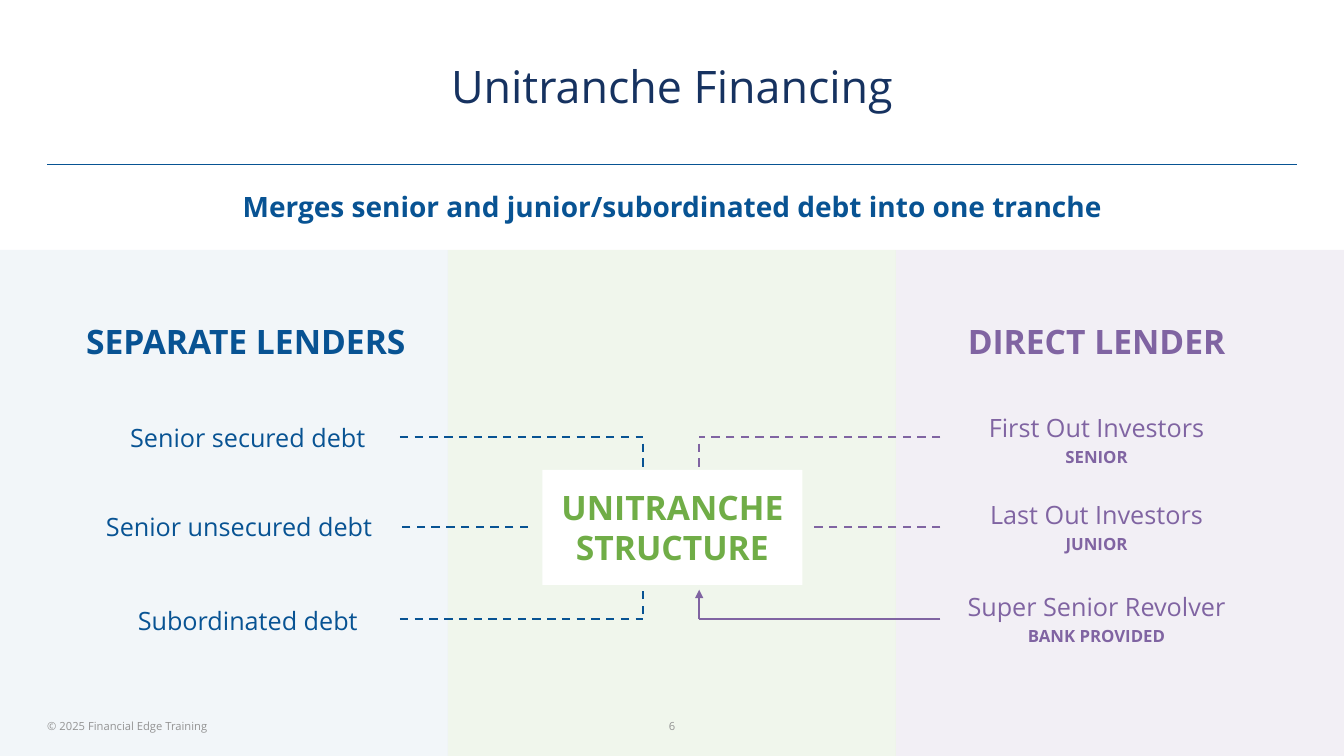
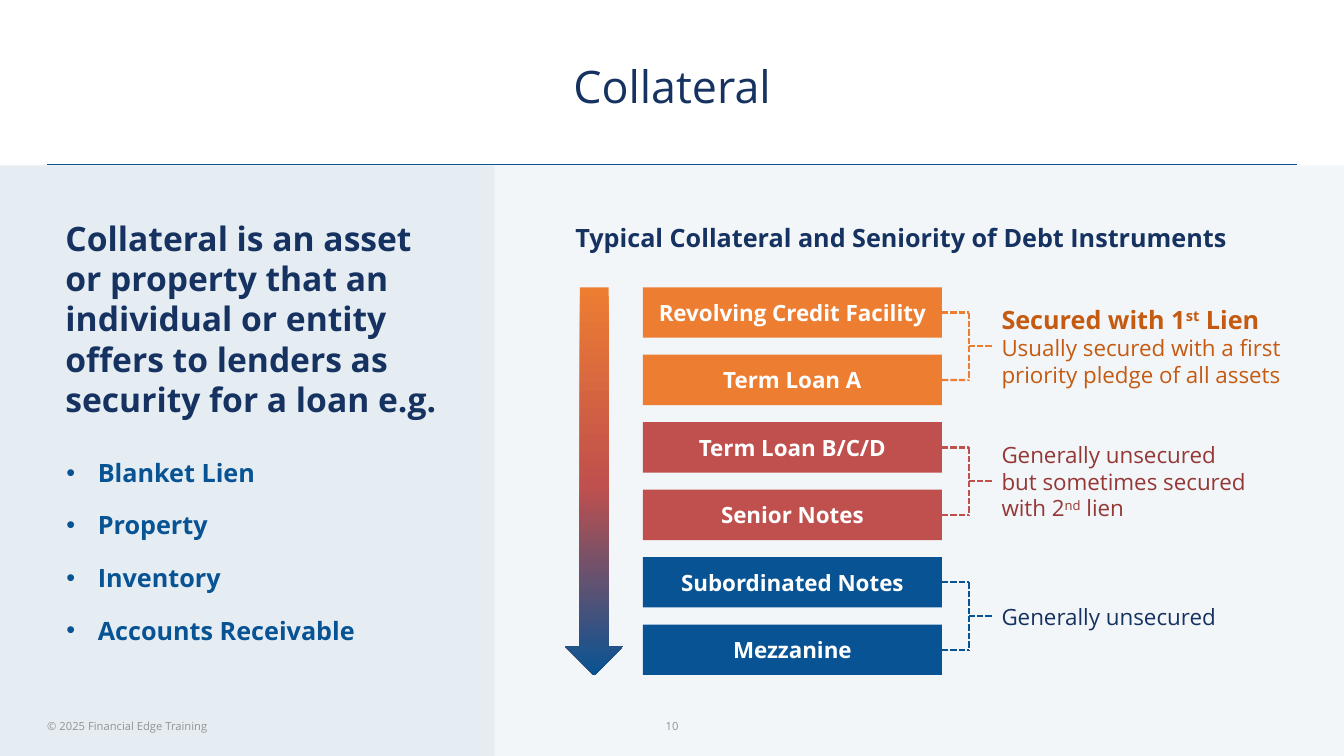
from copy import deepcopy

from lxml.etree import SubElement
from pptx import Presentation
from pptx.dml.color import RGBColor
from pptx.enum.dml import MSO_LINE
from pptx.enum.shapes import MSO_CONNECTOR, MSO_SHAPE
from pptx.enum.text import MSO_ANCHOR, MSO_AUTO_SIZE, PP_ALIGN
from pptx.oxml.ns import qn
from pptx.util import Cm, Pt

NAVY = RGBColor(0x16, 0x32, 0x60)
BLUE = RGBColor(0x08, 0x53, 0x93)
PURPLE = RGBColor(0x80, 0x64, 0xA2)
GREEN = RGBColor(0x70, 0xAD, 0x47)
ORANGE = RGBColor(0xED, 0x7D, 0x31)
RUST = RGBColor(0xC5, 0x5A, 0x11)
RED = RGBColor(0xC0, 0x50, 0x4D)
MAROON = RGBColor(0x95, 0x37, 0x35)
GREY = RGBColor(0x93, 0x93, 0x93)
WHITE = RGBColor(0xFF, 0xFF, 0xFF)

FONT = "Open Sans"
WIDTH, HEIGHT = 33.87, 19.05
LEFT, CENTER = PP_ALIGN.LEFT, PP_ALIGN.CENTER
TOP, MIDDLE = MSO_ANCHOR.TOP, MSO_ANCHOR.MIDDLE
DASH, DOTS = MSO_LINE.DASH, MSO_LINE.SQUARE_DOT
FOOTER = "© 2025 Financial Edge Training"

# Content of the financing slide: left, top, width, text
MERGE = "Merges senior and junior/subordinated debt into one tranche"
DEBTS = [
    (1.19, 9.83, 10.11, "Senior secured debt"),
    (1.96, 12.07, 8.13, "Senior unsecured debt"),
    (1.19, 14.43, 10.11, "Subordinated debt"),
]
BACKERS = [
    (9.88, "First Out Investors", "SENIOR"),
    (12.07, "Last Out Investors", "JUNIOR"),
    (14.38, "Super Senior Revolver", "BANK PROVIDED"),
]
HIGH, MID, LOW = 11.02, 13.28, 15.6
LINKS = [  # x1, y1, x2, y2, colour, dash
    (10.08, HIGH, 16.21, HIGH, BLUE, DASH),
    (16.21, 11.18, 16.21, 11.91, BLUE, DASH),
    (13.31, MID, 10.11, MID, BLUE, DASH),
    (10.08, LOW, 16.21, LOW, BLUE, DASH),
    (16.21, 15.47, 16.21, 14.73, BLUE, DASH),
    (23.7, HIGH, 17.62, HIGH, PURPLE, DASH),
    (17.62, 11.18, 17.62, 11.94, PURPLE, DASH),
    (23.7, MID, 20.5, MID, PURPLE, DASH),
    (23.7, LOW, 17.62, LOW, PURPLE, None),
]

# Content of the collateral slide
INTRO = ("Collateral is an asset or property that an individual or entity "
         "offers to lenders as security for a loan e.g.")
ASSETS = ["Blanket Lien", "Property", "Inventory", "Accounts Receivable"]
RANKING = "Typical Collateral and Seniority of Debt Instruments"
# Fill, note colour, two bars, note lines made of (text, size, bold, raised)
TIERS = [
    (ORANGE, RUST, ["Revolving Credit Facility", "Term Loan A"], [
        [("Secured with 1", 18, True, False), ("st", 18, True, True),
         (" Lien", 18, True, False)],
        [("Usually secured with a first priority pledge of all assets",
          16, False, False)]]),
    (RED, MAROON, ["Term Loan B/C/D", "Senior Notes"], [
        [("Generally unsecured", 16, False, False)],
        [("but sometimes secured", 16, False, False)],
        [("with 2", 16, False, False), ("nd", 16, False, True),
         (" lien", 16, False, False)]]),
    (BLUE, NAVY, ["Subordinated Notes", "Mezzanine"], [
        [("Generally unsecured", 16, False, False)]]),
]
FADE = [(0, ORANGE), (0.51, RED), (1, BLUE)]


def style(para, size, color, bold=False, align=CENTER):
    para.alignment = align
    font = para.font
    font.name, font.size, font.bold = FONT, Pt(size), bold
    font.color.rgb = color


def place(shape, left, top, width, height):
    shape.left, shape.top = Cm(left), Cm(top)
    shape.width, shape.height = Cm(width), Cm(height)


def label(slide, area, rows, color, align=CENTER, anchor=MIDDLE, gap=0):
    """Add a text box; rows are (text, size, bold)."""
    frame = slide.shapes.add_textbox(*map(Cm, area)).text_frame
    frame.word_wrap, frame.vertical_anchor = True, anchor
    for i, (text, size, bold) in enumerate(rows):
        para = frame.add_paragraph() if i else frame.paragraphs[0]
        para.text = text
        para.space_after = Pt(gap)
        style(para, size, color, bold, align)
    return frame


def block(slide, area, fill, text="", size=16, color=WHITE,
          kind=MSO_SHAPE.RECTANGLE):
    shape = slide.shapes.add_shape(kind, *map(Cm, area))
    shape.shadow.inherit = False
    shape.line.fill.background()
    shape.fill.solid()
    shape.fill.fore_color.rgb = fill
    if text:
        frame = shape.text_frame
        frame.word_wrap, frame.vertical_anchor = True, MIDDLE
        frame.text = text
        style(frame.paragraphs[0], size, color, True)
    return shape


def panel(slide, left, top, width, color, percent):
    """Add a translucent panel behind everything else."""
    shape = block(slide, (left, top, width, HEIGHT - top), color)
    tint = next(shape.element.spPr.iter(qn("a:srgbClr")))
    SubElement(tint, qn("a:alpha"), val=str(percent * 1000))
    slide.shapes.element.insert(2, shape.element)


def link(slide, x1, y1, x2, y2, color, dash=None, width=1.5):
    line = slide.shapes.add_connector(
        MSO_CONNECTOR.STRAIGHT, Cm(x1), Cm(y1), Cm(x2), Cm(y2))
    line.line.color.rgb = color
    line.line.width = Pt(width)
    if dash:
        line.line.dash_style = dash
    SubElement(line.element.spPr, qn("a:effectLst"))
    return line


def fill_body(slide, area, rows, size, align, anchor, gap=0, indent=0):
    """Fill the body placeholder; an indent keeps the bullets."""
    body = slide.placeholders[1]
    place(body, *area)
    frame = body.text_frame
    frame.auto_size, frame.vertical_anchor = MSO_AUTO_SIZE.NONE, anchor
    for i, text in enumerate(rows):
        para = frame.add_paragraph() if i else frame.paragraphs[0]
        para.text = text
        para.space_before = Pt(gap if i else 0)
        props = para._p.get_or_add_pPr()
        props.set("marL", str(Cm(indent)))
        props.set("indent", str(-Cm(indent)))
        if not indent:
            SubElement(props, qn("a:buNone"))
        style(para, size, BLUE, True, align)


def start(deck, title, number):
    """Add a slide with its title and footer."""
    slide = deck.slides.add_slide(deck.slide_layouts[1])
    slide.shapes.title.text = title
    style(slide.shapes.title.text_frame.paragraphs[0], 32, NAVY)
    foot = label(slide, (1.19, 17.91, 11.28, 0.76), [(FOOTER, 8, False)],
                 GREY, LEFT)
    foot.margin_left = 0
    label(slide, (13.13, 17.91, 7.62, 0.76), [(number, 8, False)], GREY)
    return slide


def set_layout(deck, slide):
    """Give the layout its title area and the rule below it."""
    layout = deck.slide_layouts[1]
    place(layout.placeholders[0], 1.19, 1.12, 31.5, 2.08)
    rule = link(slide, 1.19, 4.14, 32.69, 4.14, BLUE, width=0.75)
    layout.shapes.element.append(rule.element)


def draw_financing(slide):
    third = WIDTH / 3
    for i, (color, percent) in enumerate(
            [(BLUE, 5), (GREEN, 10), (PURPLE, 10)]):
        panel(slide, i * third, 6.3, third, color, percent)
    fill_body(slide, (5.72, 4.65, 22.45, 1.12), [MERGE], 20, CENTER, TOP)

    # Lenders on both sides
    label(slide, (1.14, 7.14, 10.11, 2.9),
          [("SEPARATE LENDERS", 24, True)], BLUE)
    for left, top, width, text in DEBTS:
        label(slide, (left, top, width, 2.41), [(text, 18, False)], BLUE)
    label(slide, (22.58, 7.14, 10.11, 2.9),
          [("DIRECT LENDER", 24, True)], PURPLE)
    for top, name, rank in BACKERS:
        label(slide, (22.58, top, 10.11, 2.41),
              [(name, 18, False), (rank, 12, True)], PURPLE, gap=3)

    # Links to the structure in the middle
    for ends in LINKS:
        link(slide, *ends)
    arrow = link(slide, 17.62, LOW, 17.62, 14.86, PURPLE)
    SubElement(arrow.line._get_or_add_ln(), qn("a:tailEnd"), type="triangle")
    block(slide, (13.67, 11.84, 6.55, 2.9), WHITE,
          "UNITRANCHE STRUCTURE", 24, GREEN)


def draw_collateral(slide):
    split = 12.47
    panel(slide, 0, 4.17, split, BLUE, 10)
    panel(slide, split, 4.17, WIDTH - split, BLUE, 5)

    # Definition and examples
    label(slide, (1.4, 5.41, 10.03, 5.23), [(INTRO, 24, True)], NAVY, LEFT)
    fill_body(slide, (1.42, 11.25, 8.89, 5.28), ASSETS, 18, LEFT, MIDDLE,
              gap=16, indent=0.79)

    # Seniority arrow
    label(slide, (14.25, 5.49, 17.93, 1.02), [(RANKING, 18, True)],
          NAVY, LEFT, TOP)
    arrow = block(slide, (14.25, 7.24, 1.45, 9.78), ORANGE,
                  kind=MSO_SHAPE.DOWN_ARROW)
    arrow.fill.gradient()
    arrow.fill.gradient_angle = 270
    stops = next(arrow.element.iter(qn("a:gsLst")))
    stops.insert(1, deepcopy(stops[0]))
    for stop, (spot, color) in zip(arrow.fill.gradient_stops, FADE):
        stop.position, stop.color.rgb = spot, color

    # Tiers: two bars, a bracket and a note each
    left, wide, tall, pitch = 16.2, 7.54, 1.27, 1.7
    spine, note = 24.41, 24.99
    for i, (fill, ink, names, lines) in enumerate(TIERS):
        top = 7.24 + 2 * i * pitch
        mids = [top + tall / 2 + j * pitch for j in range(2)]
        for name, mid in zip(names, mids):
            bar = block(slide, (left, mid - tall / 2, wide, tall), fill, name)
            arm = link(slide, left + wide, mid, spine, mid, fill, DOTS)
            arm.begin_connect(bar, 3)
        link(slide, spine, mids[0], spine, mids[1], fill, DOTS)
        center = sum(mids) / 2
        link(slide, spine, center, note, center, fill, DOTS)
        frame = label(slide, (note, top, 8.31, pitch + tall),
                      [("", 16, False)], ink, LEFT)
        para = frame.paragraphs[0]
        for j, parts in enumerate(lines):
            if j:
                para.add_line_break()
            for text, size, bold, raised in parts:
                run = para.add_run()
                run.text = text
                run.font.size, run.font.bold = Pt(size), bold
                if raised:
                    run._r.get_or_add_rPr().set("baseline", "30000")


def main():
    deck = Presentation()
    deck.slide_width, deck.slide_height = Cm(WIDTH), Cm(HEIGHT)
    first = start(deck, "Unitranche Financing", "6")
    set_layout(deck, first)
    draw_financing(first)
    draw_collateral(start(deck, "Collateral", "10"))
    deck.save("out.pptx")


if __name__ == "__main__":
    main()
